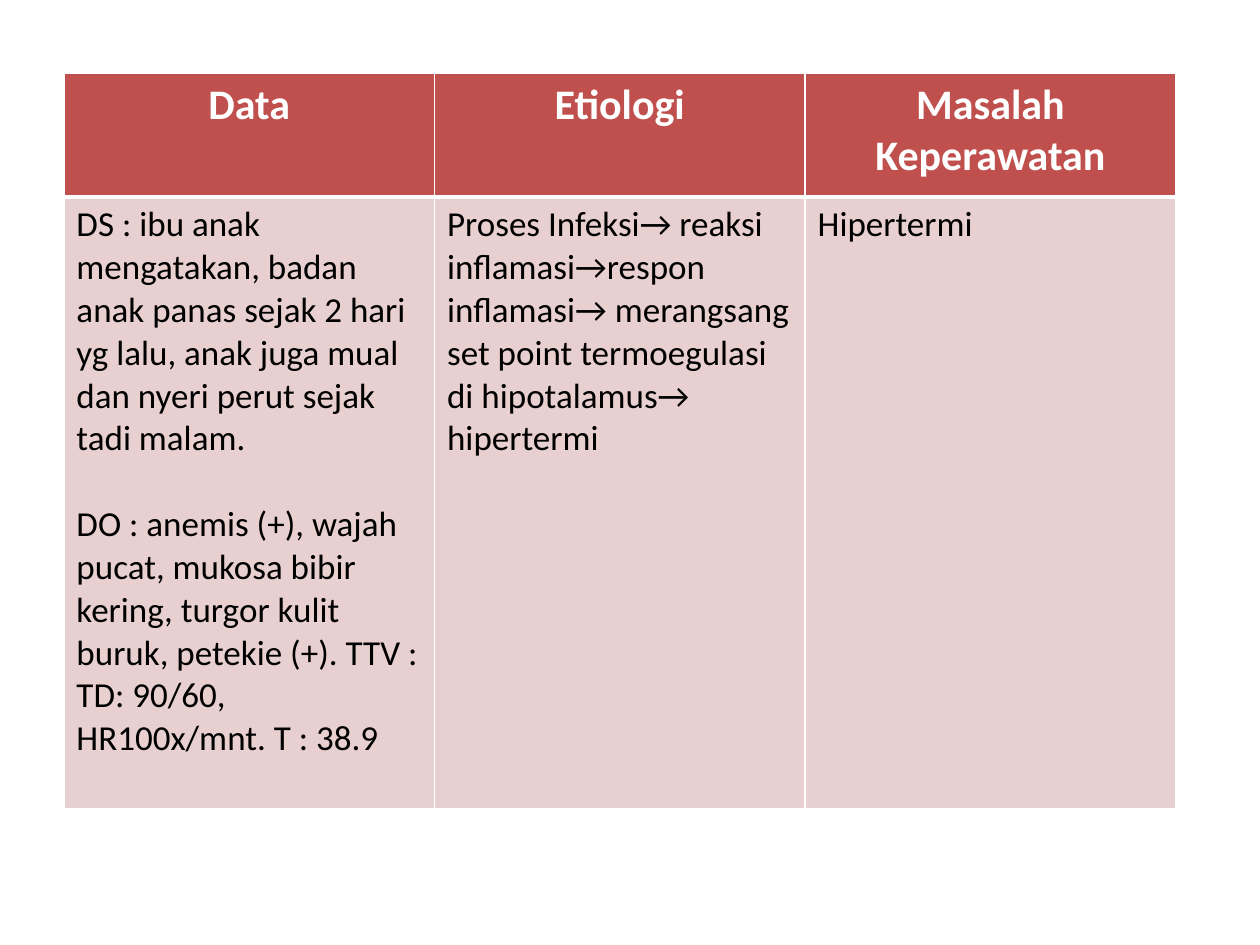
from lxml.etree import SubElement
from pptx import Presentation
from pptx.dml.color import RGBColor
from pptx.enum.text import PP_ALIGN as Align
from pptx.oxml.ns import qn
from pptx.util import Pt


def color(hex_value):
    return RGBColor.from_string(hex_value)


def add_border(cell, side, width):
    """Draw a white line on one side: L, R, T or B. Call before filling the cell."""
    properties = cell._tc.get_or_add_tcPr()
    line = SubElement(properties, qn(f"a:ln{side}"), w=str(Pt(width)))
    fill = SubElement(line, qn("a:solidFill"))
    SubElement(fill, qn("a:srgbClr"), val="FFFFFF")


# Each cell is a list of paragraphs
ROWS = [
    [["Data"], ["Etiologi"], ["Masalah Keperawatan"]],
    [
        [
            "DS : ibu anak mengatakan, badan anak panas sejak 2 hari yg lalu, "
            "anak juga mual dan nyeri perut sejak tadi malam.",
            "DO : anemis (+), wajah pucat, mukosa bibir kering, turgor kulit "
            "buruk, petekie (+). TTV : TD: 90/60, HR100x/mnt. T : 38.9",
        ],
        [
            "Proses Infeksi→ reaksi inflamasi→respon inflamasi→ merangsang "
            "set point termoegulasi di hipotalamus→ hipertermi"
        ],
        ["Hipertermi"],
    ],
]
HEADER = {
    "height": 70.5, "fill": "C0504D", "align": Align.CENTER,
    "borders": {"L": 1, "R": 1, "T": 1, "B": 3},
    "font": {"name": "Calibri", "size": Pt(24), "bold": True},
    "text": "FFFFFF",
}
BODY = {
    "height": 349.5, "fill": "E8D0D0", "align": Align.LEFT,
    "borders": {"L": 1, "R": 1, "T": 3, "B": 1},
    "font": {"name": "Calibri", "size": Pt(20), "bold": False},
    "text": "000000",
}
PARAGRAPH_GAP = 24.4

presentation = Presentation()
presentation.slide_width, presentation.slide_height = Pt(720), Pt(540)
slide = presentation.slides.add_slide(presentation.slide_layouts[6])

table = slide.shapes.add_table(
    len(ROWS), len(ROWS[0]), Pt(36.5), Pt(42), Pt(635.4), Pt(420)
).table
for column in table.columns:
    column.width = Pt(211.8)

for row, contents, style in zip(table.rows, ROWS, (HEADER, BODY)):
    row.height = Pt(style["height"])
    for cell, texts in zip(row.cells, contents):
        for side, width in style["borders"].items():
            add_border(cell, side, width)
        cell.fill.solid()
        cell.fill.fore_color.rgb = color(style["fill"])
        cell.text = "\n".join(texts)
        for index, paragraph in enumerate(cell.text_frame.paragraphs):
            paragraph.alignment = style["align"]
            if index:
                paragraph.space_before = Pt(PARAGRAPH_GAP)
            font = paragraph.runs[0].font
            for name, value in style["font"].items():
                setattr(font, name, value)
            font.color.rgb = color(style["text"])

presentation.save("out.pptx")
